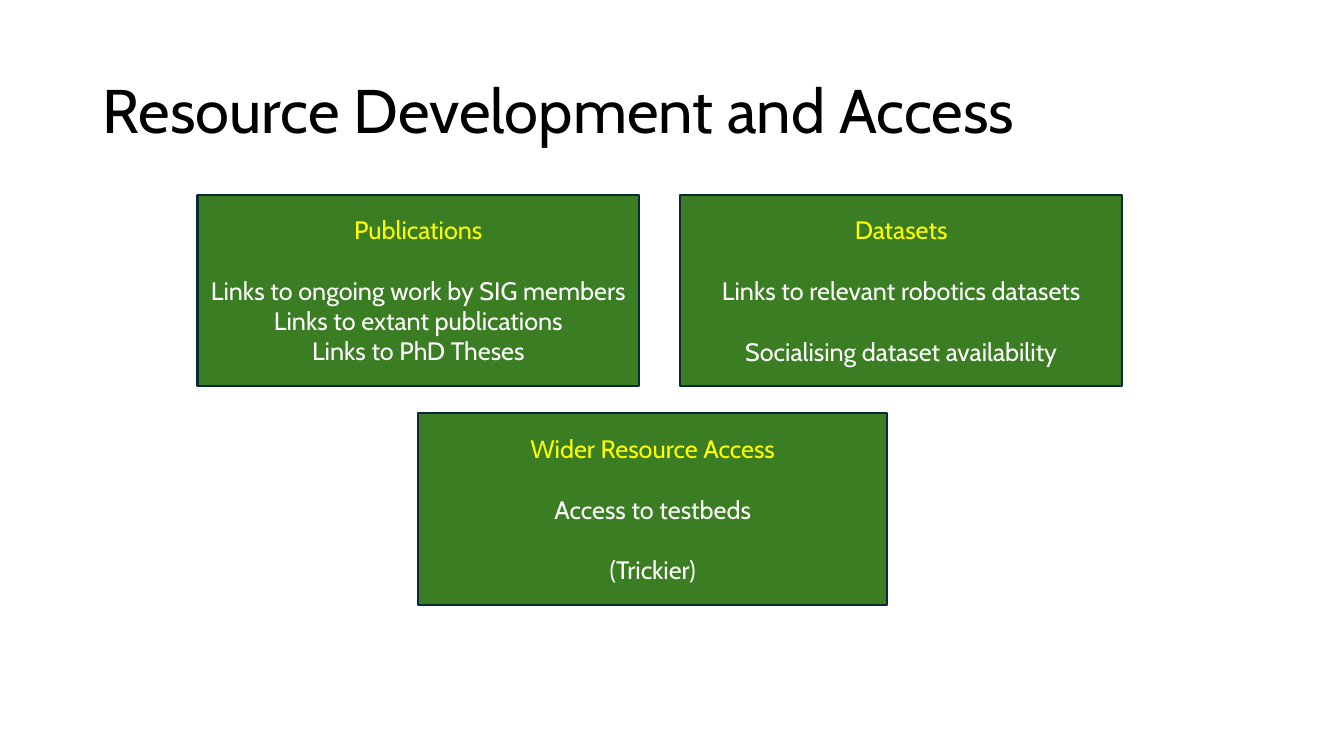
from dataclasses import dataclass

from pptx import Presentation
from pptx.dml.color import RGBColor
from pptx.enum.shapes import MSO_SHAPE
from pptx.enum.text import MSO_ANCHOR, PP_ALIGN
from pptx.util import Pt

RECTANGLE = MSO_SHAPE.RECTANGLE
MIDDLE = MSO_ANCHOR.MIDDLE
CENTER = PP_ALIGN.CENTER

COLORS = {
    "title": "000000",
    "fill": "3B7D23",
    "border": "092A39",
    "heading": "FFFF00",
    "body": "FFFFFF",
}
FONT = "Cabin"
BLANK_LAYOUT = 6
BODY_SIZE = 18
LINE_GAP = 21.7  # height of one line of body text
BOX_HEIGHT = 136.8
TOP_ROW, BOTTOM_ROW = 139, 295.2


@dataclass
class ResourceBox:
    left: float
    top: float
    width: float
    heading: str
    lines: list[str]
    line_gap: float  # space between the body lines


RESOURCE_BOXES = [
    ResourceBox(141.1, TOP_ROW, 315.4, "Publications", [
        "Links to ongoing work by SIG members",
        "Links to extant publications",
        "Links to PhD Theses",
    ], 0),
    ResourceBox(486, TOP_ROW, 315.4, "Datasets", [
        "Links to relevant robotics datasets",
        "Socialising dataset availability",
    ], LINE_GAP),
    ResourceBox(298.8, BOTTOM_ROW, 334.8, "Wider Resource Access", [
        "Access to testbeds",
        "(Trickier)",
    ], LINE_GAP),
]


def color(name: str) -> RGBColor:
    return RGBColor.from_string(COLORS[name])


def style_paragraph(para, text: str, size: float, color_name: str) -> None:
    para.text = text
    para.font.name = FONT
    para.font.size = Pt(size)
    para.font.color.rgb = color(color_name)


def add_title(page, text: str) -> None:
    box = page.shapes.add_textbox(Pt(66.2), Pt(28.8), Pt(828), Pt(104.4))
    frame = box.text_frame
    frame.word_wrap = True
    frame.vertical_anchor = MIDDLE
    para = frame.paragraphs[0]
    para.line_spacing = 0.9
    style_paragraph(para, text, 44, "title")


def add_resource_box(page, resource: ResourceBox) -> None:
    box = page.shapes.add_shape(
        RECTANGLE, Pt(resource.left), Pt(resource.top),
        Pt(resource.width), Pt(BOX_HEIGHT))
    box.shadow.inherit = False
    box.fill.solid()
    box.fill.fore_color.rgb = color("fill")
    box.line.color.rgb = color("border")
    box.line.width = Pt(1.5)

    frame = box.text_frame
    frame.word_wrap = True
    frame.vertical_anchor = MIDDLE
    heading = frame.paragraphs[0]
    heading.alignment = CENTER
    style_paragraph(heading, resource.heading, BODY_SIZE, "heading")
    for index, line in enumerate(resource.lines):
        para = frame.add_paragraph()
        para.alignment = CENTER
        para.space_before = Pt(resource.line_gap if index else LINE_GAP)
        style_paragraph(para, line, BODY_SIZE, "body")


def main() -> None:
    deck = Presentation()
    deck.slide_width, deck.slide_height = Pt(960), Pt(540)
    page = deck.slides.add_slide(deck.slide_layouts[BLANK_LAYOUT])

    # Title
    add_title(page, "Resource Development and Access")

    # Resource boxes
    for resource in RESOURCE_BOXES:
        add_resource_box(page, resource)

    deck.save("out.pptx")


if __name__ == "__main__":
    main()
